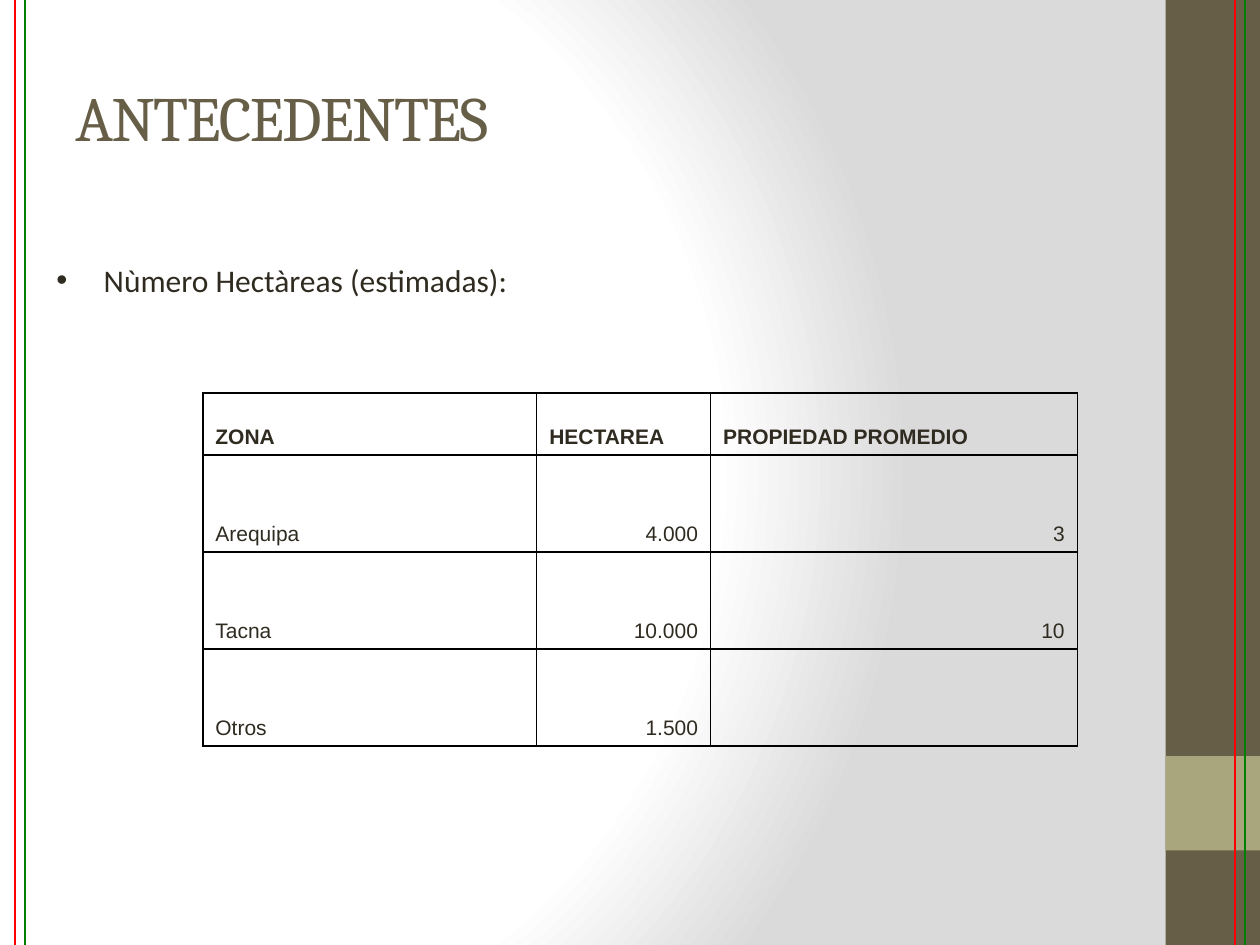
from lxml.etree import SubElement as Sub
from pptx import Presentation
from pptx.dml.color import RGBColor as Rgb
from pptx.enum.shapes import MSO_CONNECTOR as Conn, MSO_SHAPE as Shape
from pptx.enum.text import MSO_ANCHOR as Anchor, PP_ALIGN as Align
from pptx.oxml.ns import qn
from pptx.util import Inches, Pt

TITLE = "ANTECEDENTES"
POINT = "Nùmero Hectàreas (estimadas):"
ROWS = [
    ("ZONA", "HECTAREA", "PROPIEDAD PROMEDIO"),
    ("Arequipa", "4.000", "3"),
    ("Tacna", "10.000", "10"),
    ("Otros", "1.500", ""),
]
WIDTHS = (2.65, 1.38, 2.91)
HEIGHTS = (0.49, 0.77, 0.77, 0.77)
BANDS = [((9.25, 0, 0.75, 7.5), "brown"), ((9.25, 6, 0.75, 0.75), "olive")]
RULES = [(0.12, "red"), (0.2, "green"), (9.8, "red"), (9.88, "green")]
THEME = {
    "brown": "675E47", "olive": "A9A57C", "red": "FF0000", "green": "008000",
    "ink": "2F2B20", "line": "000000",
    "title": ("Cambria", 36, "brown"),
    "body": ("Calibri", 18, "ink"),
    "cell": ("Arial", 12, "ink"),
    "glow": [(0, "FFFFFF"), (75, "FFFFFF"), (100, "DADADA")],
    "focus": {"l": 20, "t": 50, "r": 100, "b": 50},
}
INDENT = Inches(0.375)


def color(name):
    """Return the theme colour of that name."""
    return Rgb.from_string(THEME[name])


def style(para, kind, bold=False):
    """Set the font of a paragraph from the theme."""
    font = para.font
    face, size, ink = THEME[kind]
    font.name, font.size, font.bold = face, Pt(size), bold
    font.color.rgb = color(ink)


def hang(para):
    """Give a paragraph a hanging indent and return its properties."""
    props = para._p.get_or_add_pPr()
    props.set("marL", str(INDENT))
    props.set("indent", str(-INDENT))
    return props


def paint(slide):
    """Fill the background with a round gradient."""
    slide.background.fill.gradient()
    grad = slide.element.find(".//" + qn("a:gradFill"))
    for child in list(grad):
        grad.remove(child)
    stops = Sub(grad, qn("a:gsLst"))
    for pos, tone in THEME["glow"]:
        stop = Sub(stops, qn("a:gs"), pos=str(pos * 1000))
        Sub(stop, qn("a:srgbClr"), val=tone)
    round_ = Sub(grad, qn("a:path"), {"path": "circle"})
    sides = {key: str(val * 1000) for key, val in THEME["focus"].items()}
    Sub(round_, qn("a:fillToRect"), sides)


def add_band(slide, box, tone):
    """Add a plain block of colour."""
    band = slide.shapes.add_shape(Shape.RECTANGLE, *map(Inches, box))
    band.shadow.inherit = False
    band.fill.solid()
    band.fill.fore_color.rgb = color(tone)
    band.line.fill.background()


def add_rule(slide, x, tone):
    """Add a thin line over the full height."""
    rule = slide.shapes.add_connector(
        Conn.STRAIGHT, Inches(x), 0, Inches(x), Inches(7.5))
    rule.line.color.rgb = color(tone)
    rule.line.width = Pt(1)
    Sub(rule._element.spPr, qn("a:effectLst"))


def add_text(slide, box, text, anchor):
    """Add a wrapped text box and return its paragraph."""
    frame = slide.shapes.add_textbox(*map(Inches, box)).text_frame
    frame.word_wrap = True
    frame.vertical_anchor = anchor
    para = frame.paragraphs[0]
    para.text = text
    return para


def edge(cell):
    """Draw the four borders of a cell."""
    props = cell._tc.get_or_add_tcPr()
    for side in "LRTB":
        line = Sub(props, qn("a:ln" + side), w=str(Pt(1)))
        Sub(Sub(line, qn("a:solidFill")), qn("a:srgbClr"), val=THEME["line"])


def add_grid(slide):
    """Add the table of zones."""
    size = (1.61, 3.12, sum(WIDTHS), sum(HEIGHTS))
    grid = slide.shapes.add_table(
        len(ROWS), len(WIDTHS), *map(Inches, size)).table
    grid.first_row = grid.horz_banding = False
    for col, width in zip(grid.columns, WIDTHS):
        col.width = Inches(width)
    for r, row in enumerate(ROWS):
        grid.rows[r].height = Inches(HEIGHTS[r])
        for c, text in enumerate(row):
            cell = grid.cell(r, c)
            edge(cell)
            cell.fill.background()
            cell.vertical_anchor = Anchor.BOTTOM
            para = cell.text_frame.paragraphs[0]
            para.text = text
            hang(para)
            para.alignment = Align.RIGHT if r and c else Align.LEFT
            style(para, "cell", r == 0)


def main():
    """Build the slide and save it."""
    deck = Presentation()
    deck.slide_width, deck.slide_height = Inches(10), Inches(7.5)
    slide = deck.slides.add_slide(deck.slide_layouts[6])
    paint(slide)
    for box, tone in BANDS:
        add_band(slide, box, tone)
    head = add_text(slide, (0.5, 0.3, 9, 1.25), TITLE, Anchor.MIDDLE)
    style(head, "title")
    head.runs[0]._r.get_or_add_rPr().set("spc", "-100")
    for x, tone in RULES:
        add_rule(slide, x, tone)
    point = add_text(slide, (0.35, 2.02, 9, 2.42), POINT, Anchor.TOP)
    props = hang(point)
    Sub(props, qn("a:buFont"), typeface="Arial")
    Sub(props, qn("a:buChar"), char="•")
    style(point, "body")
    add_grid(slide)
    deck.save("out.pptx")


if __name__ == "__main__":
    main()
